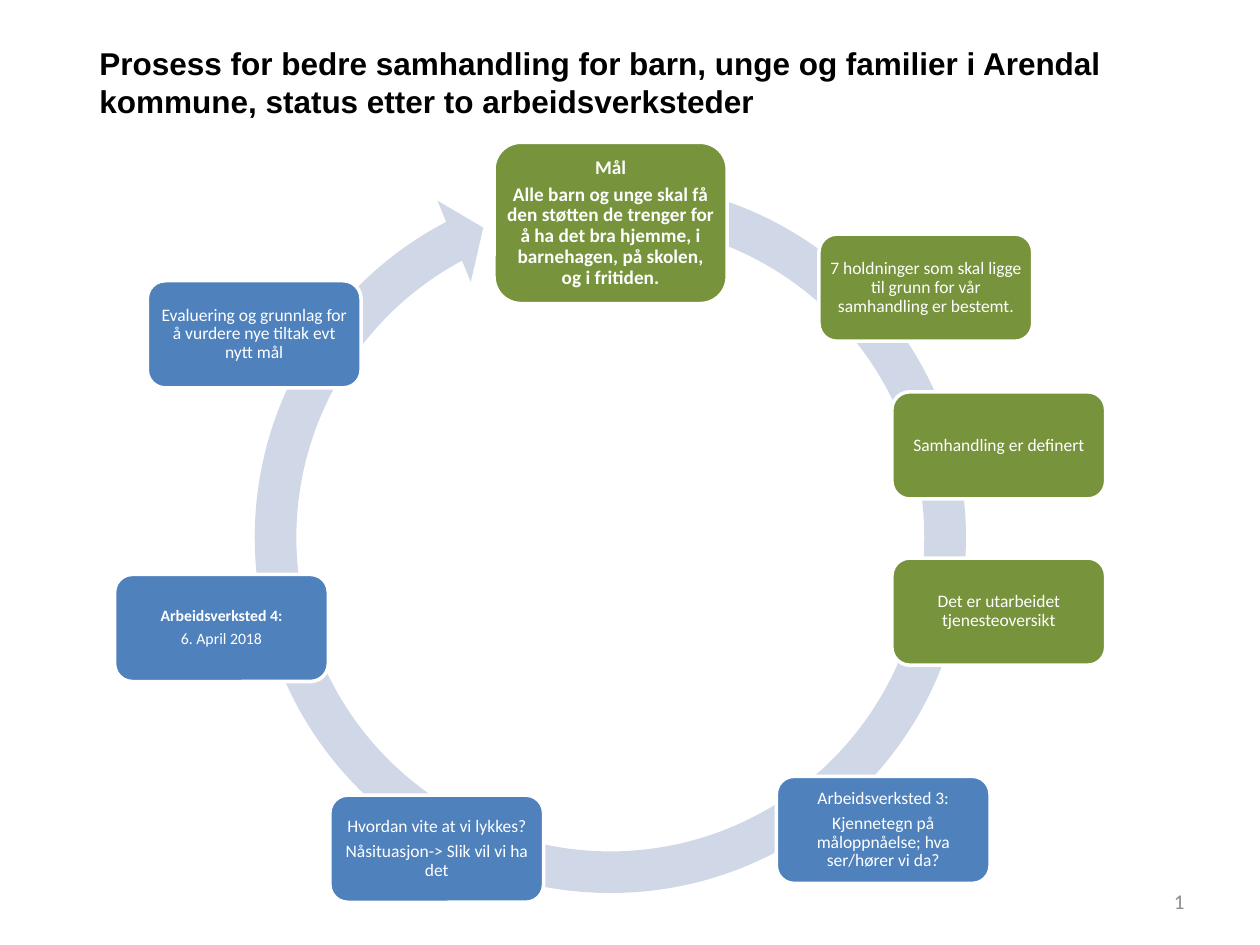
from pptx import Presentation
from pptx.dml.color import RGBColor
from pptx.enum import shapes, text
from pptx.util import Cm, Pt

GREEN = RGBColor(0x77, 0x93, 0x3C)
BLUE = RGBColor(0x4F, 0x81, 0xBD)
PALE = RGBColor(0xD0, 0xD8, 0xE8)
WHITE = RGBColor(0xFF, 0xFF, 0xFF)
BLACK = RGBColor(0, 0, 0)
GREY = RGBColor(0x8C, 0x8C, 0x8C)

WIDE, HIGH = 4.31, 2.16
STEPS = [
    (15.65, 15.65, BLUE, ["Arbeidsverksted 3:",
                          "Kjennetegn på måloppnåelse; hva ser/hører vi da?"]),
    (6.65, 16.03, BLUE, ["Hvordan vite at vi lykkes?",
                         "Nåsituasjon-> Slik vil vi ha det"]),
    (2.97, 5.66, BLUE, ["Evaluering og grunnlag for å vurdere nye tiltak evt nytt mål"]),
    (16.51, 4.72, GREEN, ["7 holdninger som skal ligge til grunn for vår "
                          "samhandling er bestemt."]),
    (17.98, 11.25, GREEN, ["Det er utarbeidet tjenesteoversikt"]),
    (17.98, 7.9, GREEN, ["Samhandling er definert"]),
]


def write(shape, *lines, size=10, color=WHITE, bold=(False,), font="Calibri",
          align=text.PP_ALIGN.CENTER, inset=None, gap=0, lead=None):
    """Write lines into a shape; the last bold flag holds for the rest."""
    frame = shape.text_frame
    frame.word_wrap = True
    frame.auto_size = text.MSO_AUTO_SIZE.NONE
    frame.vertical_anchor = text.MSO_ANCHOR.MIDDLE
    if inset is not None:
        frame.margin_left = frame.margin_right = Cm(inset)
        frame.margin_top = frame.margin_bottom = Cm(inset)
    for i, line in enumerate(lines):
        par = frame.add_paragraph() if i else frame.paragraphs[0]
        par.alignment = align
        par.line_spacing = lead
        par.space_after = Pt(gap if i < len(lines) - 1 else 0)
        run = par.add_run()
        run.text = line
        run.font.name = font
        run.font.size = Pt(size)
        run.font.bold = bold[min(i, len(bold) - 1)]
        run.font.color.rgb = color


def place(shape, x, y, w, h):
    """Move and size a shape."""
    shape.left, shape.top, shape.width, shape.height = map(Cm, (x, y, w, h))


def ring(slide, x, y, side):
    """Draw the round arrow behind the steps."""
    arrow = slide.shapes.add_shape(
        shapes.MSO_SHAPE.CIRCULAR_ARROW, Cm(x), Cm(y), Cm(side), Cm(side))
    for i, value in enumerate((0.055, 3.307, 145.312, 169.414, 0.058)):
        arrow.adjustments[i] = value
    arrow.shadow.inherit = False
    arrow.fill.solid()
    arrow.fill.fore_color.rgb = PALE
    arrow.line.fill.background()


def step(slide, x, y, fill, lines, w=WIDE, h=HIGH, **style):
    """Draw one rounded box of the cycle."""
    box = slide.shapes.add_shape(
        shapes.MSO_SHAPE.ROUNDED_RECTANGLE, Cm(x), Cm(y), Cm(w), Cm(h))
    box.shadow.inherit = False
    box.fill.solid()
    box.fill.fore_color.rgb = fill
    box.line.color.rgb = WHITE
    box.line.width = Pt(2)
    write(box, *lines, inset=0.1, gap=3.5, lead=0.9, **style)


def main():
    """Build and save the slide."""
    deck = Presentation()
    deck.slide_width, deck.slide_height = Cm(25.4), Cm(19.05)
    slide = deck.slides.add_slide(deck.slide_layouts[5])

    title = slide.shapes.title
    place(title, 1.75, 0.99, 22.38, 1.32)
    write(title, "Prosess for bedre samhandling for barn, unge og familier i "
          "Arendal kommune, status etter to arbeidsverksteder", size=18,
          color=BLACK, bold=(True,), font="Arial", align=text.PP_ALIGN.LEFT)
    page = slide.shapes.add_textbox(Cm(18.21), Cm(17.65), Cm(5.92), Cm(1.02))
    write(page, "1", size=12, color=GREY, align=text.PP_ALIGN.RIGHT)

    ring(slide, 4.67, 3.2, 15.27)
    step(slide, 9.96, 2.87, GREEN,
         ["Mål", "Alle barn og unge skal få den støtten de trenger for å ha det "
          "bra hjemme, i barnehagen, på skolen, og i fritiden."],
         w=4.7, h=3.25, size=11, bold=(True,))
    for x, y, fill, lines in STEPS:
        step(slide, x, y, fill, lines)
    step(slide, 2.31, 11.58, BLUE, ["Arbeidsverksted 4:", "6. April 2018"],
         size=9, bold=(True, False))
    deck.save("out.pptx")


if __name__ == "__main__":
    main()
